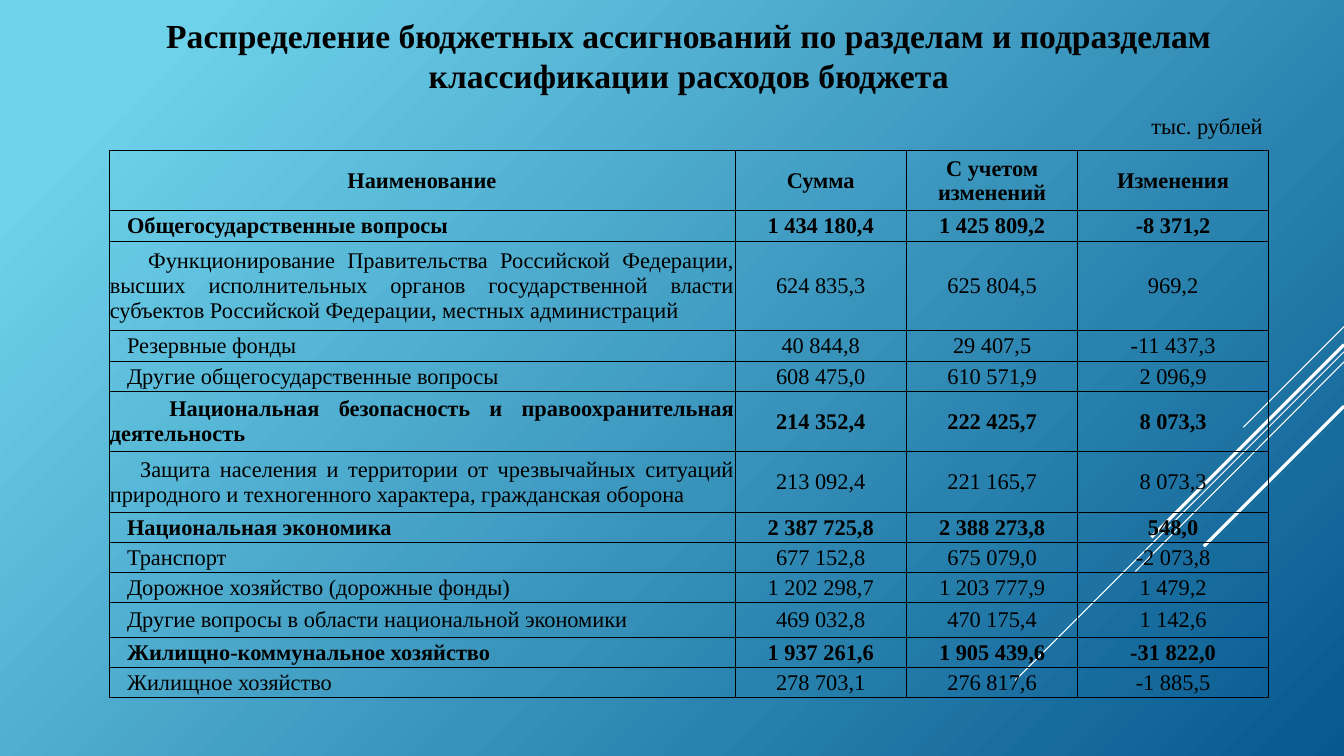
from dataclasses import dataclass

from lxml.etree import SubElement
from pptx import Presentation
from pptx.dml.color import RGBColor as Color
from pptx.enum.shapes import MSO_CONNECTOR as Connector
from pptx.enum.text import MSO_ANCHOR as Anchor, MSO_AUTO_SIZE as AutoSize, PP_ALIGN as Align
from pptx.oxml.ns import qn
from pptx.util import Inches, Pt


@dataclass(frozen=True)
class Theme:
    font: str = "Times New Roman"
    ink: str = "000000"
    streak: str = "FFFFFF"
    light: str = "6ED2EB"
    dark: str = "06588E"
    title_size: int = 24
    body_size: int = 16


theme = Theme()


def style(para, size, bold, align):
    para.alignment = align
    para.font.name = theme.font
    para.font.size = Pt(size)
    para.font.bold = bold
    para.font.color.rgb = Color.from_string(theme.ink)


def add_text(page, bounds, text, size, bold, align):
    box = page.shapes.add_textbox(*map(Inches, bounds))
    box.text_frame.word_wrap = True
    box.text_frame.auto_size = AutoSize.SHAPE_TO_FIT_TEXT
    para = box.text_frame.paragraphs[0]
    para.text = text
    style(para, size, bold, align)


deck = Presentation()
deck.slide_width = Inches(13.33)
deck.slide_height = Inches(7.5)
page = deck.slides.add_slide(deck.slide_layouts[6])

backdrop = page.background.fill
backdrop.gradient()
backdrop.gradient_angle = 315
stops = [(0.1, theme.light), (1, theme.dark)]
for stop, (position, color) in zip(backdrop.gradient_stops, stops):
    stop.position = position
    stop.color.rgb = Color.from_string(color)

streaks = [
    (3.24, 12.33, 4.24, 0.75),
    (3.49, 10.07, 6.75, 0.75),
    (3.59, 11.26, 5.67, 0.75),
    (3.42, 11.42, 5.33, 2.25),
    (4.03, 11.94, 5.42, 2.25),
]
for top, end_x, end_y, width in streaks:
    streak = page.shapes.add_connector(
        Connector.STRAIGHT, Inches(13.33), Inches(top), Inches(end_x), Inches(end_y)
    )
    streak.line.color.rgb = Color.from_string(theme.streak)
    streak.line.width = Pt(width)
    SubElement(streak._element.spPr, qn("a:effectLst"))

add_text(
    page, (1.52, 0.1, 10.62, 0.91),
    "Распределение бюджетных ассигнований по разделам и подразделам классификации расходов бюджета",
    theme.title_size, True, Align.CENTER,
)
add_text(page, (11.32, 1.06, 1.65, 0.37), "тыс. рублей", theme.body_size, False, Align.LEFT)

budget = [
    ("Наименование", "Сумма", "С учетом изменений", "Изменения"),
    ("Общегосударственные вопросы", "1 434 180,4", "1 425 809,2", "-8 371,2"),
    ("Функционирование Правительства Российской Федерации, высших исполнительных органов "
     "государственной власти субъектов Российской Федерации, местных администраций",
     "624 835,3", "625 804,5", "969,2"),
    ("Резервные фонды", "40 844,8", "29 407,5", "-11 437,3"),
    ("Другие общегосударственные вопросы", "608 475,0", "610 571,9", "2 096,9"),
    ("Национальная безопасность и правоохранительная деятельность",
     "214 352,4", "222 425,7", "8 073,3"),
    ("Защита населения и территории от чрезвычайных ситуаций природного и техногенного "
     "характера, гражданская оборона", "213 092,4", "221 165,7", "8 073,3"),
    ("Национальная экономика", "2 387 725,8", "2 388 273,8", "548,0"),
    ("Транспорт", "677 152,8", "675 079,0", "-2 073,8"),
    ("Дорожное хозяйство (дорожные фонды)", "1 202 298,7", "1 203 777,9", "1 479,2"),
    ("Другие вопросы в области национальной экономики", "469 032,8", "470 175,4", "1 142,6"),
    ("Жилищно-коммунальное хозяйство", "1 937 261,6", "1 905 439,6", "-31 822,0"),
    ("Жилищное хозяйство", "278 703,1", "276 817,6", "-1 885,5"),
]
column_widths = [6.21, 1.7, 1.7, 1.89]
row_heights = [0.6, 0.3, 0.89, 0.3, 0.3, 0.6, 0.6, 0.3, 0.3, 0.3, 0.34, 0.3, 0.3]
bold_rows = {0, 1, 5, 7, 11}
left_rows = {7, 8, 11, 12}
wide_indents = {2: 0.38, 5: 0.59, 6: 0.3}

frame = page.shapes.add_table(
    len(budget), len(column_widths), Inches(1.08), Inches(1.49), Inches(11.5), Inches(5.43)
)
table = frame.table
table.first_row = False
table.horz_banding = False
for column, width in zip(table.columns, column_widths):
    column.width = Inches(width)

for row_index, (entries, height) in enumerate(zip(budget, row_heights)):
    table.rows[row_index].height = Inches(height)
    for column_index, entry in enumerate(entries):
        cell = table.cell(row_index, column_index)
        cell.text = entry
        cell.vertical_anchor = Anchor.MIDDLE
        cell.margin_left = cell.margin_right = cell.margin_top = Inches(0.01)
        cell.margin_bottom = 0
        para = cell.text_frame.paragraphs[0]
        align = Align.CENTER
        if row_index and column_index == 0:
            align = Align.LEFT if row_index in left_rows else Align.JUSTIFY
            indent = Inches(wide_indents.get(row_index, 0.17))
            para._p.get_or_add_pPr().set("indent", str(indent))
        style(para, theme.body_size, row_index in bold_rows, align)
        properties = cell._tc.get_or_add_tcPr()
        for side in ("lnL", "lnR", "lnT", "lnB"):
            border = SubElement(properties, qn(f"a:{side}"), w=str(Pt(0.5)))
            fill = SubElement(border, qn("a:solidFill"))
            SubElement(fill, qn("a:srgbClr"), val=theme.ink)
        cell.fill.background()

deck.save("out.pptx")
